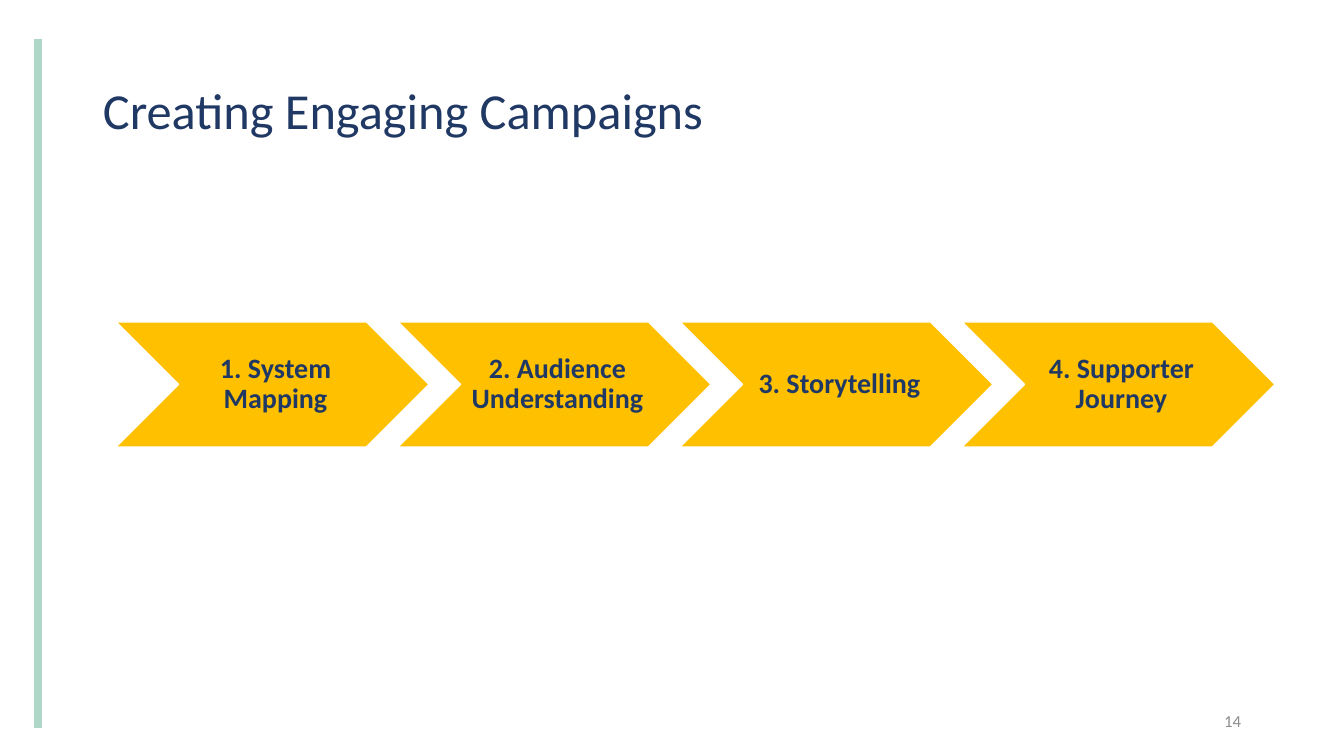
"""Build the Creating Engaging Campaigns slide with its four-step chevron process."""
import pptx
import pptx.dml.color
import pptx.enum.shapes
import pptx.enum.text
import pptx.util
from lxml import etree

EMU_PER_PX = 914400 / 100.8
NAVY = "203864"
ALIGN = pptx.enum.text.PP_ALIGN


def lengths(*pixels):
    return [pptx.util.Emu(round(pixel * EMU_PER_PX)) for pixel in pixels]


def color(value):
    return pptx.dml.color.RGBColor.from_string(value)


deck = pptx.Presentation()
deck.slide_width, deck.slide_height = lengths(1344, 756)
page = deck.slides.add_slide(deck.slide_layouts[6])

accent = page.shapes.add_connector(
    pptx.enum.shapes.MSO_CONNECTOR.STRAIGHT, *lengths(38, 39, 38, 728)
)
accent.line.color.rgb = color("AED7C7")
accent.line.width = pptx.util.Pt(6)
properties = accent.element.spPr
etree.SubElement(properties, pptx.oxml.ns.qn("a:effectLst"))

title = page.shapes.add_textbox(*lengths(93, 40, 1159, 146))
number = page.shapes.add_textbox(*lengths(1180, 701, 71, 40))
texts = [
    (title, "Creating Engaging Campaigns", NAVY,
     {"alignment": ALIGN.LEFT, "line_spacing": 0.9},
     {"size": pptx.util.Pt(36), "bold": False}),
    (number, "14", "8C8C8C",
     {"alignment": ALIGN.RIGHT},
     {"size": pptx.util.Pt(12), "bold": False}),
]

steps = ["1. System Mapping", "2. Audience Understanding", "3. Storytelling", "4. Supporter Journey"]
for index, step in enumerate(steps):
    chevron = page.shapes.add_shape(
        pptx.enum.shapes.MSO_SHAPE.CHEVRON, *lengths(116 + 282 * index, 322, 313, 125)
    )
    chevron.shadow.inherit = False
    chevron.fill.solid()
    chevron.fill.fore_color.rgb = color("FFC000")
    chevron.line.color.rgb = color("FFFFFF")
    chevron.line.width = pptx.util.Pt(1)
    insets = lengths(9, 3, 3, 3)
    for side, inset in zip(("left", "top", "right", "bottom"), insets):
        setattr(chevron.text_frame, f"margin_{side}", inset)
    texts.append((chevron, step, NAVY,
                  {"alignment": ALIGN.CENTER, "line_spacing": 0.9},
                  {"size": pptx.util.Pt(20), "bold": True}))

for box, wording, ink, para_format, font_format in texts:
    frame = box.text_frame
    frame.word_wrap = True
    frame.vertical_anchor = pptx.enum.text.MSO_ANCHOR.MIDDLE
    para = frame.paragraphs[0]
    for name, value in para_format.items():
        setattr(para, name, value)
    span = para.add_run()
    span.text = wording
    span.font.color.rgb = color(ink)
    for name, value in {"name": "Calibri", **font_format}.items():
        setattr(span.font, name, value)

deck.save("out.pptx")
